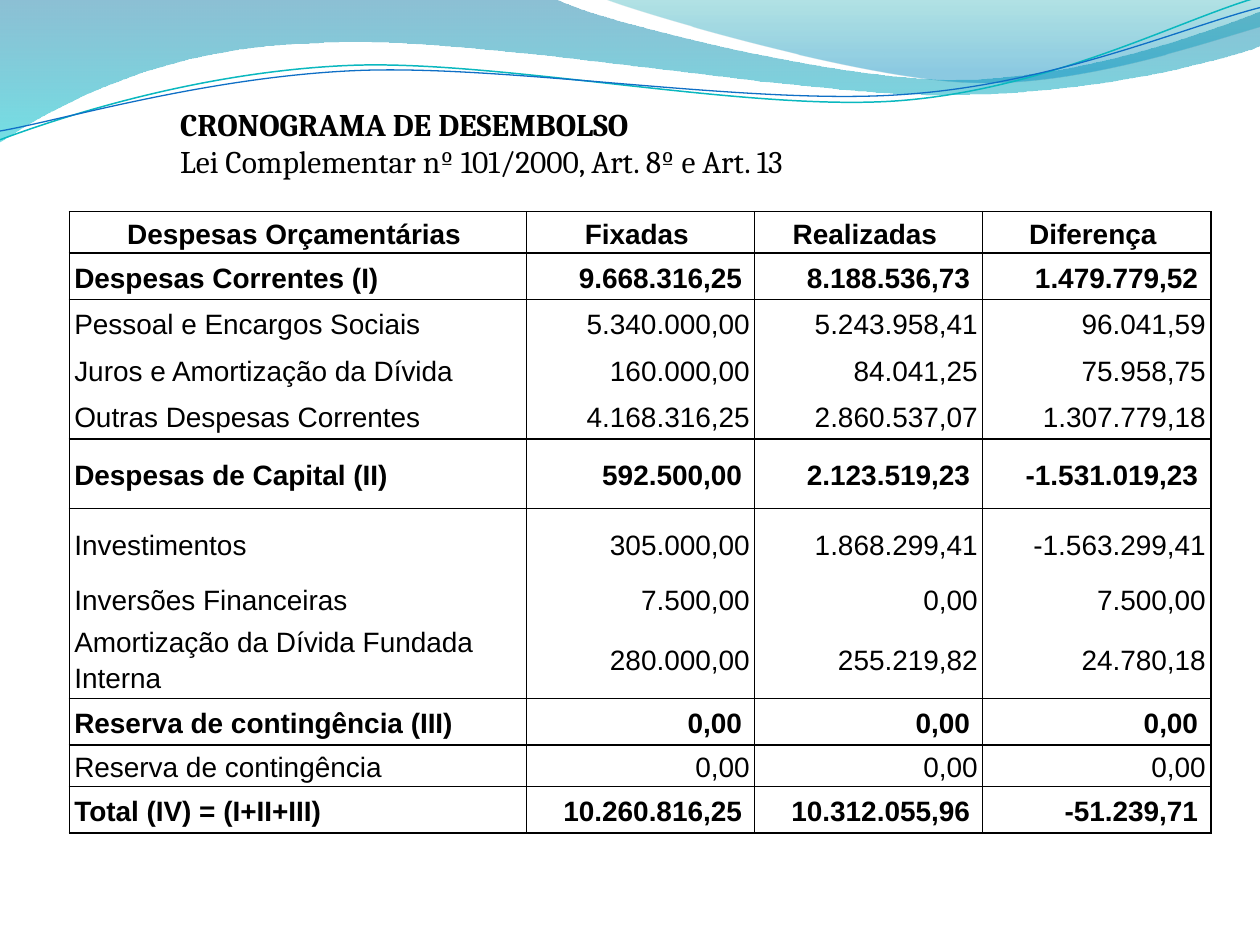
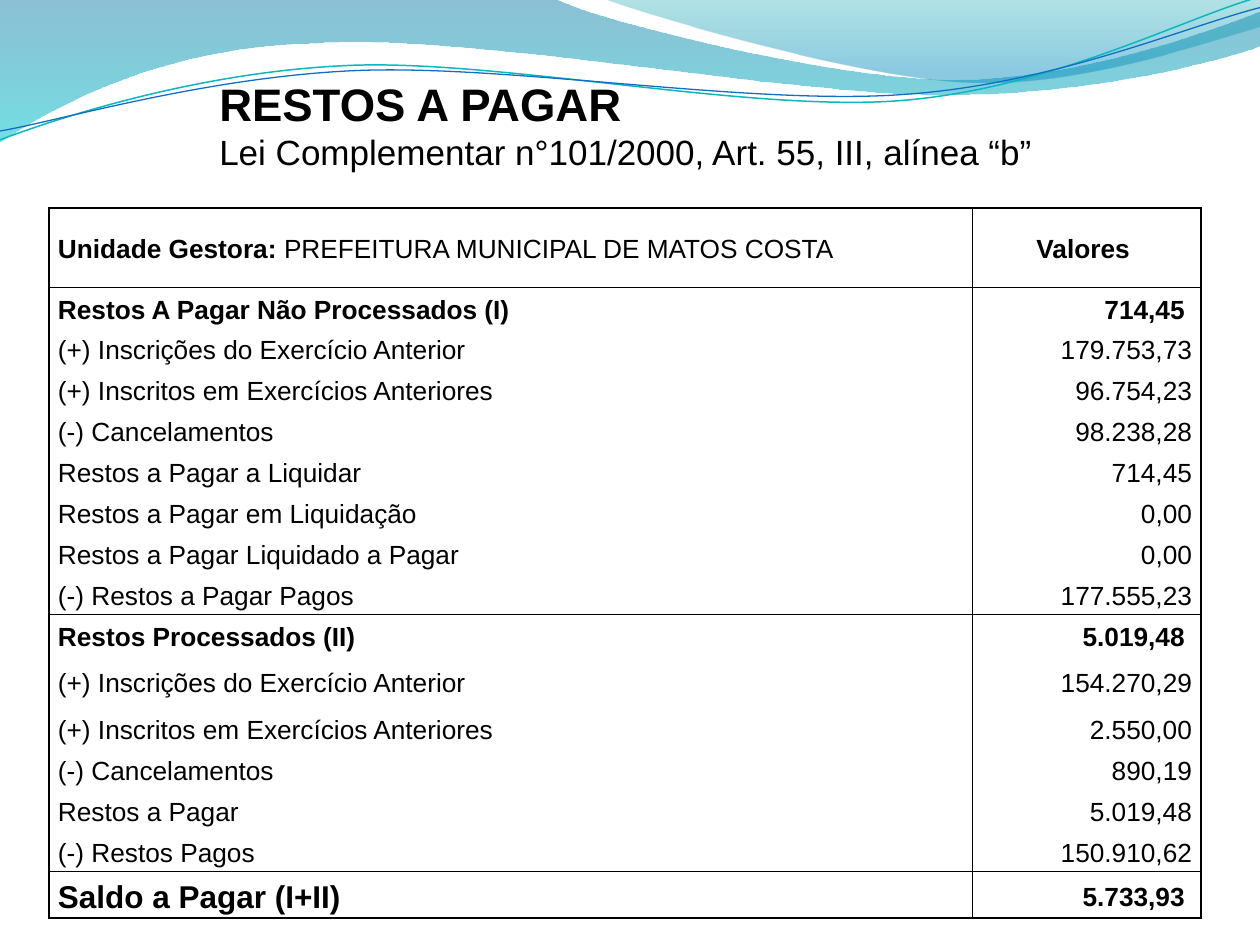
from dataclasses import dataclass
from math import cos, radians, sin

from lxml.etree import SubElement
from pptx import Presentation
from pptx.dml.color import RGBColor as Color
from pptx.enum.text import MSO_ANCHOR as Anchor
from pptx.enum.text import MSO_AUTO_SIZE as AutoSize
from pptx.enum.text import PP_ALIGN as Align
from pptx.oxml.ns import qn
from pptx.util import Inches, Pt


@dataclass(frozen=True)
class Theme:
    ink: str = "000000"
    deep_wave: tuple = ((0, "0074A1", 45), (1, "00C6CF", 55))
    pale_wave: tuple = ((0, "00A1A9", 30), (0.8, "008BBF", 45))
    teal_line: str = "0AB8BF"
    blue_line: str = "0F6FC6"
    serif: str = "Cambria"
    sans: str = "Arial"
    law_title: int = 18
    big_title: int = 26
    subtitle: int = 20
    wide_table: int = 16
    long_table: int = 15
    balance: int = 18
    gap_row: int = 6
    border: int = 1
    line_spacing: float = 1.15
    line_tilt: float = 357.3


DEEP_WAVE = [
    (0, 0), (4.4, -0.01), (4.76, 0.17, 6.64, 0.63, 7.58, 0.63),
    (8.53, 0.63, 9.58, 0.26, 10, 0.09), (10.01, 0.36),
    (9.83, 0.44, 8.7, 0.76, 7.46, 0.75), (6.22, 0.75, 3.82, 0.28, 2.57, 0.34),
    (1.29, 0.36, 0.46, 0.83, -0.01, 1.13), (0, 0),
]
PALE_WAVE = [
    (4.79, -0.01), (5.09, 0.11, 6.82, 0.62, 7.69, 0.65),
    (8.56, 0.69, 9.61, 0.32, 10, 0.21), (10, 0), (4.79, -0.01),
]
TEAL_LINE = [
    (0, 1.11), (0.48, 0.93, 1.58, 0.57, 2.77, 0.52),
    (3.95, 0.47, 5.93, 0.89, 7.13, 0.8), (8.33, 0.71, 9.38, 0.15, 9.98, -0.02),
]
BLUE_LINE = [
    (0, 1.04), (0.47, 0.96, 1.64, 0.61, 2.83, 0.56),
    (4.03, 0.51, 5.97, 0.84, 7.17, 0.75), (8.36, 0.67, 9.41, 0.21, 10, 0.06),
]

DISBURSEMENTS = [
    ("", "", "", ""),
    ("Despesas Orçamentárias ", "Fixadas", "Realizadas", "Diferença"),
    ("Despesas Correntes (I)", "9.668.316,25", "8.188.536,73", "1.479.779,52"),
    ("Pessoal e Encargos Sociais", "5.340.000,00", "5.243.958,41", "96.041,59"),
    ("Juros e Amortização da Dívida", "160.000,00", "84.041,25", "75.958,75"),
    ("Outras Despesas Correntes", "4.168.316,25", "2.860.537,07", "1.307.779,18"),
    ("Despesas de Capital (II)", "592.500,00", "2.123.519,23", "-1.531.019,23"),
    ("Investimentos", "305.000,00", "1.868.299,41", "-1.563.299,41"),
    ("Inversões Financeiras", "7.500,00", "0,00", "7.500,00"),
    ("Amortização da Dívida Fundada Interna", "280.000,00", "255.219,82", "24.780,18"),
    ("Reserva de contingência (III)", "0,00", "0,00", "0,00"),
    ("Reserva de contingência", "0,00", "0,00", "0,00"),
    ("Total (IV) = (I+II+III)", "10.260.816,25", "10.312.055,96", "-51.239,71"),
]
PAYABLES = [
    ("Unidade Gestora:", "Valores"),
    ("Restos A Pagar Não Processados (I)", "714,45"),
    ("(+) Inscrições do Exercício Anterior", "179.753,73"),
    ("(+) Inscritos em Exercícios Anteriores", "96.754,23"),
    ("(-) Cancelamentos", "98.238,28"),
    ("Restos a Pagar a Liquidar", "714,45"),
    ("Restos a Pagar em Liquidação", "0,00"),
    ("Restos a Pagar Liquidado a Pagar", "0,00"),
    ("(-) Restos a Pagar Pagos", "177.555,23"),
    ("Restos Processados (II)", "5.019,48"),
    ("(+) Inscrições do Exercício Anterior", "154.270,29"),
    ("(+) Inscritos em Exercícios Anteriores", "2.550,00"),
    ("(-) Cancelamentos", "890,19"),
    ("Restos a Pagar", "5.019,48"),
    ("(-) Restos Pagos", "150.910,62"),
    ("Saldo a Pagar (I+II)", "5.733,93"),
]


class Report:
    def __init__(self, deck, theme):
        self.deck = deck
        self.theme = theme
        self.page = None

    def new_page(self):
        self.page = self.deck.slides.add_slide(self.deck.slide_layouts[5])

    def style(self, span, size, bold, font):
        span.font.name = font
        span.font.size = Pt(size)
        span.font.bold = bold
        span.font.color.rgb = Color.from_string(self.theme.ink)

    def outline(self, segments, box, close, tilt=0):
        left, top, width, height = box
        middle_x, middle_y = left + width / 2, top + height / 2
        angle = radians(-tilt)

        def local(x, y):
            dx, dy = x - middle_x, y - middle_y
            return (Inches(dx * cos(angle) - dy * sin(angle) + width / 2),
                    Inches(dx * sin(angle) + dy * cos(angle) + height / 2))

        curves = [[local(*part[i:i + 2]) for i in range(0, len(part), 2)]
                  for part in segments]
        anchors = [curve[-1] for curve in curves]
        builder = self.page.shapes.build_freeform(*anchors[0], scale=1.0)
        builder.add_line_segments(anchors[1:], close=close)
        shape = builder.convert_to_shape()
        shape.left, shape.top = Inches(left), Inches(top)
        shape.width, shape.height = Inches(width), Inches(height)
        shape.rotation = tilt
        route = next(shape.element.iter(qn("a:path")))
        route.set("w", str(shape.width))
        route.set("h", str(shape.height))
        for node in list(route):
            route.remove(node)
        for index, curve in enumerate(curves):
            kind = "a:cubicBezTo" if len(curve) == 3 else "a:lnTo"
            node = SubElement(route, qn(kind if index else "a:moveTo"))
            for x, y in curve:
                SubElement(node, qn("a:pt"), x=str(x), y=str(y))
        if close:
            SubElement(route, qn("a:close"))
        shape.shadow.inherit = False
        return shape

    def wave(self, segments, box, stops):
        shape = self.outline(segments, box, True)
        shape.line.fill.background()
        shape.fill.gradient()
        shape.fill.gradient_angle = 270
        for stop, (position, color, _) in zip(shape.fill.gradient_stops, stops):
            stop.position = position
            stop.color.rgb = Color.from_string(color)
        for node, (_, _, opacity) in zip(shape.element.iter(qn("a:srgbClr")), stops):
            SubElement(node, qn("a:alpha"), val=str(opacity * 1000))
        return shape

    def wave_line(self, segments, box, color, width):
        shape = self.outline(segments, box, False, self.theme.line_tilt)
        shape.fill.background()
        shape.line.color.rgb = Color.from_string(color)
        shape.line.width = Pt(width)
        return shape

    def share_waves(self):
        theme = self.theme
        waves = [
            self.wave(DEEP_WAVE, (-0.01, -0.01, 10.02, 1.14), theme.deep_wave),
            self.wave(PALE_WAVE, (4.79, -0.01, 5.21, 0.7), theme.pale_wave),
        ]
        lines = [
            self.wave_line(TEAL_LINE, (-0.02, 0.22, 10.02, 0.71), theme.teal_line, 0.85),
            self.wave_line(BLUE_LINE, (-0.02, 0.3, 10.03, 0.58), theme.blue_line, 0.75),
        ]
        group = self.page.shapes.add_group_shape(shapes=lines)
        for index, shape in enumerate(waves + [group]):
            self.deck.slide_master.shapes.element.insert(2 + index, shape.element)
        for index, node in enumerate(
            node for shape in waves + [group] for node in shape.element.iter(qn("p:cNvPr"))
        ):
            node.set("id", str(20 + index))

    def title(self, text, left, top, width, height, sizes, font):
        box = self.page.shapes.title
        box.left, box.top = Inches(left), Inches(top)
        box.width, box.height = Inches(width), Inches(height)
        frame = box.text_frame
        frame.text = text
        frame.word_wrap = True
        frame.auto_size = AutoSize.SHAPE_TO_FIT_TEXT
        frame.vertical_anchor = Anchor.TOP
        for index, para in enumerate(frame.paragraphs):
            para.alignment = Align.LEFT
            self.style(para.runs[0], sizes[index], index == 0, font)

    def borders(self, cell, sides, top, bottom):
        properties = cell._tc.get_or_add_tcPr()
        edges = {"a:lnL": sides, "a:lnR": sides, "a:lnT": top, "a:lnB": bottom}
        for edge, visible in edges.items():
            line = SubElement(properties, qn(edge), w=str(Pt(self.theme.border)))
            if visible:
                fill = SubElement(line, qn("a:solidFill"))
                SubElement(fill, qn("a:srgbClr"), val=self.theme.ink)
            else:
                SubElement(line, qn("a:noFill"))
        cell.fill.background()

    def table(self, rows, left, top, height, widths, heights, size, bold_rows,
              ruled_rows, inset, header, header_align):
        holder = self.page.shapes.add_table(
            len(rows), len(widths), Inches(left), Inches(top),
            Inches(sum(widths)), Inches(height),
        )
        table = holder.table
        table.first_row = table.horz_banding = False
        for column, width in zip(table.columns, widths):
            column.width = Inches(width)
        for row, row_height in zip(table.rows, heights):
            row.height = Inches(row_height)
        holder.height = Inches(height)
        for r, texts in enumerate(rows):
            bold = r in bold_rows
            for c, text in enumerate(texts):
                cell = table.cell(r, c)
                cell.vertical_anchor = Anchor.MIDDLE
                cell.margin_left = cell.margin_right = Inches(inset)
                cell.margin_top = cell.margin_bottom = Inches(0.01)
                self.borders(cell, bool(text), r - 1 in ruled_rows or r == header,
                             r in ruled_rows)
                para = cell.text_frame.paragraphs[0]
                if not text:
                    SubElement(para._p, qn("a:endParaRPr"), sz=str(self.theme.gap_row * 100))
                    continue
                para.text = f"{text} " if bold and c else text
                para.line_spacing = self.theme.line_spacing
                para.alignment = Align.RIGHT if c else Align.LEFT
                if r == header:
                    para.alignment = Align.CENTER if c else header_align
                self.style(para.runs[0], size, bold, self.theme.sans)
        return table


def disbursement_page(report):
    theme = report.theme
    report.title(
        "CRONOGRAMA DE DESEMBOLSO\nLei Complementar nº 101/2000, Art. 8º e Art. 13",
        1.33, 0.78, 7.19, 0.71, (theme.law_title, theme.law_title), theme.serif,
    )
    table = report.table(
        DISBURSEMENTS, 0.55, 1.53, 5.09, [3.63] + [1.81] * 3,
        [0.15, 0.2] + [0.37] * 4 + [0.55] * 2 + [0.2, 0.37, 0.37, 0.2, 0.37],
        theme.wide_table, {1, 2, 6, 10, 12}, set(range(13)) - {3, 4, 7, 8},
        0.04, 1, Align.CENTER,
    )
    for column in (0, 2):
        table.cell(0, column).merge(table.cell(0, column + 1))


def payables_page(report):
    theme = report.theme
    report.title(
        "RESTOS A PAGAR\nLei Complementar n°101/2000, Art. 55, III, alínea “b”",
        1.64, 0.55, 6.8, 0.88, (theme.big_title, theme.subtitle), theme.sans,
    )
    height, header, tall, last = 5.64, 0.63, 0.42, 0.37
    regular = (height - header - tall - last) / 13
    table = report.table(
        PAYABLES, 0.39, 1.65, height, [7.33, 1.81],
        [header] + [regular] * 9 + [tall] + [regular] * 4 + [last],
        theme.long_table, {0, 1, 9, 15}, {0, 8, 14, 15}, 0.07, 0, Align.LEFT,
    )
    unit = table.cell(0, 0).text_frame.paragraphs[0].add_run()
    unit.text = " PREFEITURA MUNICIPAL DE MATOS COSTA"
    report.style(unit, theme.long_table, False, theme.sans)
    balance = table.cell(15, 0).text_frame.paragraphs[0].runs[0]
    report.style(balance, theme.balance, True, theme.sans)


def main():
    deck = Presentation()
    deck.slide_width, deck.slide_height = Inches(10), Inches(7.5)
    report = Report(deck, Theme())
    report.new_page()
    report.share_waves()
    disbursement_page(report)
    report.new_page()
    payables_page(report)
    deck.save("out.pptx")


if __name__ == "__main__":
    main()
